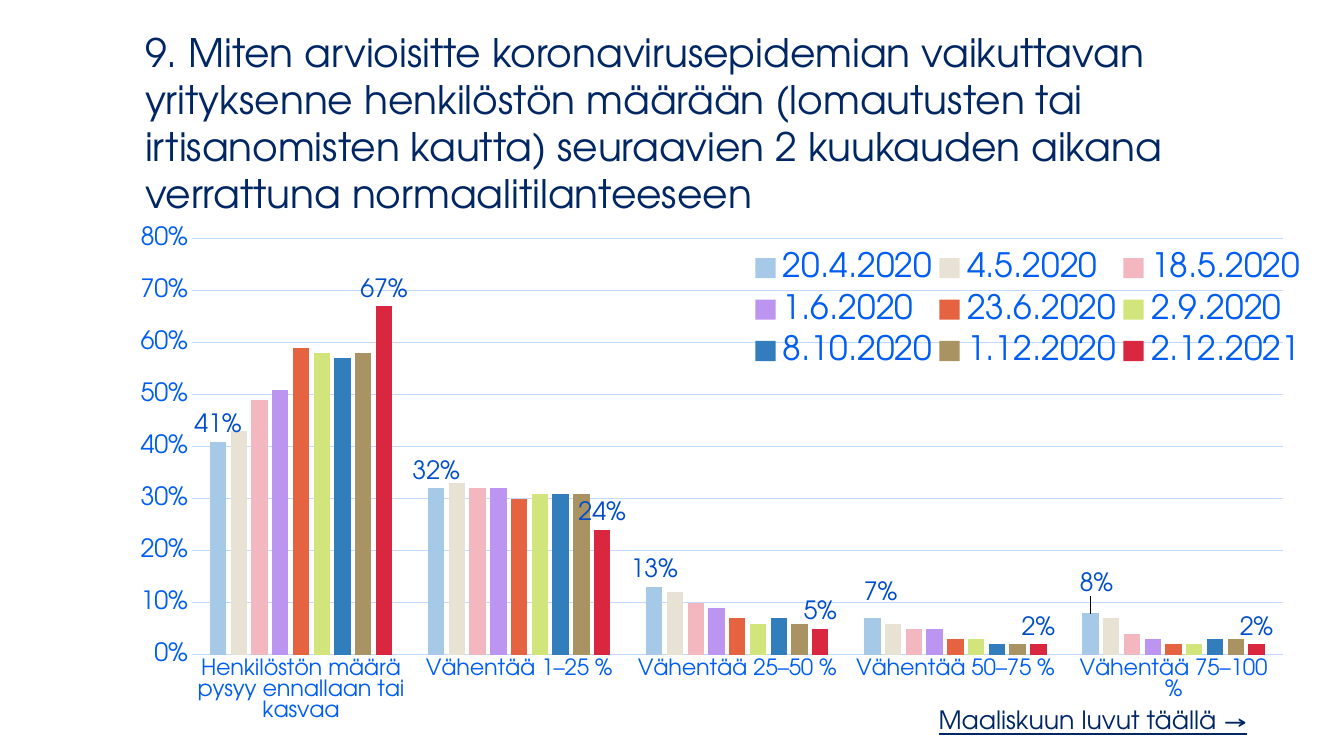
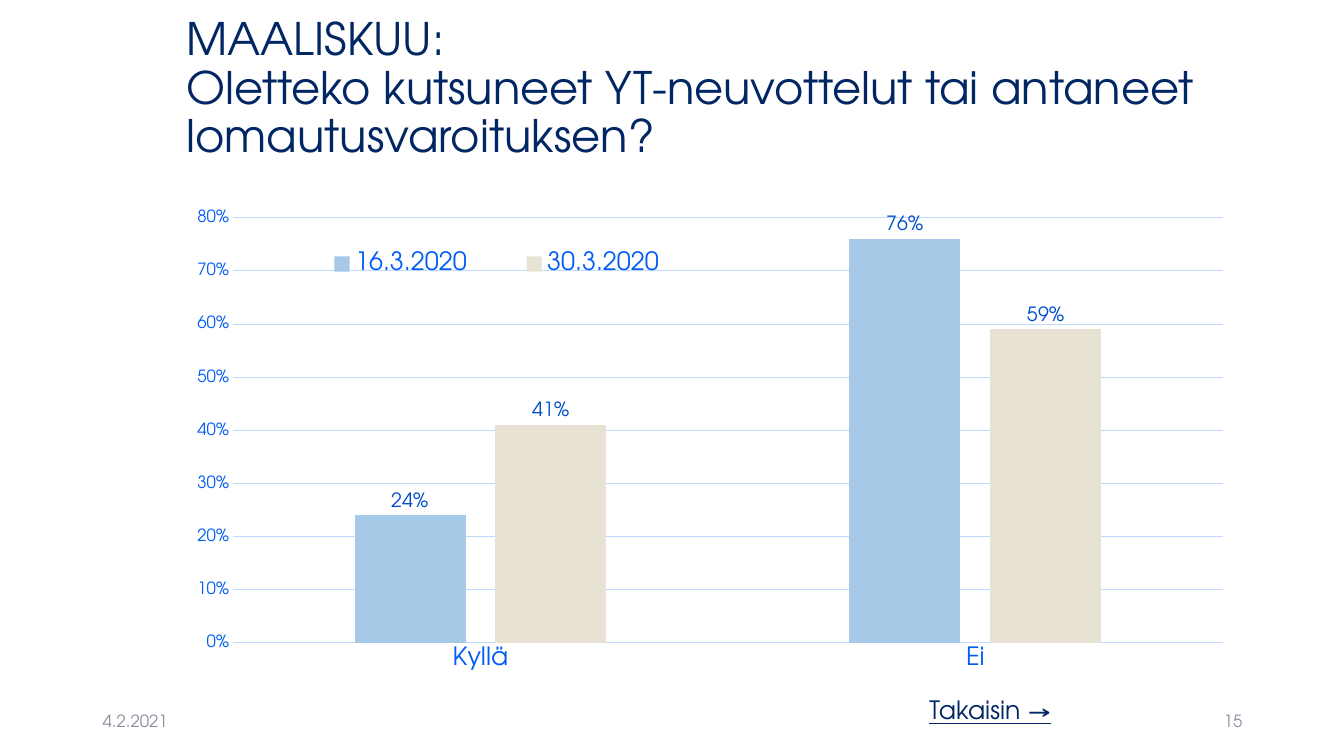
"""Builds two survey result slides with clustered column charts."""
from lxml import etree
from pptx import Presentation
from pptx.chart.data import CategoryChartData
from pptx.dml.color import RGBColor
from pptx.enum.chart import XL_CHART_TYPE, XL_LABEL_POSITION, XL_LEGEND_POSITION, XL_TICK_MARK
from pptx.enum.text import MSO_ANCHOR, PP_ALIGN
from pptx.oxml.ns import qn
from pptx.util import Inches, Pt

COLUMNS = XL_CHART_TYPE.COLUMN_CLUSTERED
ABOVE = XL_LABEL_POSITION.OUTSIDE_END
BOTTOM = XL_LEGEND_POSITION.BOTTOM
NO_TICK = XL_TICK_MARK.NONE
TOP, MIDDLE = MSO_ANCHOR.TOP, MSO_ANCHOR.MIDDLE
LEFT, RIGHT = PP_ALIGN.LEFT, PP_ALIGN.RIGHT

FONT = "TeX Gyre Adventor"
PERCENT = "0%"
COLORS = {"title": "002663", "axis": "005DF3", "label": "004DCA",
          "grid": "C1D9FF", "footer": "8C8E9F"}
SERIES_COLORS = ["A5C9E7", "E8E2D5", "F2B7BF", "BB95EF", "E66342",
                 "D1E57C", "327DBC", "A99362", "D8273F"]

STAFF_CATEGORIES = ["Henkilöstön määrä pysyy ennallaan tai kasvaa", "Vähentää 1–25 %",
                    "Vähentää 25–50 %", "Vähentää 50–75 %", "Vähentää 75–100 %"]
STAFF_SERIES = {
    "20.4.2020": [0.41, 0.32, 0.13, 0.07, 0.08],
    "4.5.2020": [0.43, 0.33, 0.12, 0.06, 0.07],
    "18.5.2020": [0.49, 0.32, 0.1, 0.05, 0.04],
    "1.6.2020": [0.51, 0.32, 0.09, 0.05, 0.03],
    "23.6.2020": [0.59, 0.3, 0.07, 0.03, 0.02],
    "2.9.2020": [0.58, 0.31, 0.06, 0.03, 0.02],
    "8.10.2020": [0.57, 0.31, 0.07, 0.02, 0.03],
    "1.12.2020": [0.58, 0.31, 0.06, 0.02, 0.03],
    "2.12.2021": [0.67, 0.24, 0.05, 0.02, 0.02],
}
NOTICE_SERIES = {"16.3.2020": [0.24, 0.76], "30.3.2020": [0.41, 0.59]}


def style_font(font, size, color, **extra):
    """Apply the shared typeface with a size, a colour and extra attributes."""
    values = {"name": FONT, "size": Pt(size), **extra}
    for name, value in values.items():
        setattr(font, name, value)
    font.color.rgb = RGBColor.from_string(COLORS[color])


def style_line(line, color):
    """Give a chart line its colour and the shared thin width."""
    line.color.rgb = RGBColor.from_string(COLORS[color])
    line.width = Pt(0.75)


def add_text(page, place, lines, size, color="title", anchor=TOP, align=LEFT,
             spacing=None, **extra):
    """Add a wrapped text box whose lines share one paragraph."""
    box = page.shapes.add_textbox(*map(Inches, place))
    box.text_frame.word_wrap = True
    box.text_frame.vertical_anchor = anchor
    para = box.text_frame.paragraphs[0]
    para.alignment = align
    para.line_spacing = spacing
    for index, line in enumerate(lines):
        if index:
            para.add_line_break()
        span = para.add_run()
        span.text = line
        style_font(span.font, size, color, **extra)


def make_layout(**values):
    """Return a manual chart layout element."""
    layout = etree.Element(qn("c:layout"))
    manual = etree.SubElement(layout, qn("c:manualLayout"))
    for name, value in values.items():
        etree.SubElement(manual, qn(f"c:{name}")).set("val", str(value))
    return layout


def place_part(part, before, place, **target):
    """Fix a chart part at fractions of the chart area."""
    for old in part.findall(qn("c:layout")):
        part.remove(old)
    layout = make_layout(**target, xMode="edge", yMode="edge",
                         **dict(zip("xywh", place)))
    if before is None:
        part.insert(0, layout)
    else:
        part.find(qn(before)).addnext(layout)


def add_labels(series, size):
    """Show percentages above the columns of a series."""
    labels = series.data_labels
    values = {"show_value": True, "number_format": PERCENT,
              "number_format_is_linked": False, "position": ABOVE}
    for name, value in values.items():
        setattr(labels, name, value)
    style_font(labels.font, size, "label")


def move_label(chart, series, point, size, shift):
    """Shift one data label from its usual place."""
    label = series.points[point].data_label
    label.position = ABOVE
    style_font(label.font, size, "label")
    for index in chart.element.xpath(f".//c:dLbl/c:idx[@val='{point}']"):
        index.addnext(make_layout(**dict(zip("xy", shift))))


def style_axes(chart, category_size, value_size):
    """Format both axes and the gridlines."""
    for axis, size in ((chart.category_axis, category_size), (chart.value_axis, value_size)):
        axis.major_tick_mark = axis.minor_tick_mark = NO_TICK
        style_font(axis.tick_labels.font, size, "axis")
    style_line(chart.category_axis.format.line, "grid")
    scale = chart.value_axis
    scale.minimum_scale, scale.maximum_scale, scale.major_unit = 0, 0.8, 0.1
    scale.format.line.fill.background()
    style_line(scale.major_gridlines.format.line, "grid")
    scale.tick_labels.number_format = PERCENT
    scale.tick_labels.number_format_is_linked = False


def add_columns(page, place, categories, values, labelled, sizes, plot_place,
                legend_place, shifts):
    """Add a clustered column chart with a legend over the plot."""
    data = CategoryChartData(number_format=PERCENT)
    data.categories = categories
    for name, numbers in values.items():
        data.add_series(name, numbers)
    chart = page.shapes.add_chart(COLUMNS, *map(Inches, place), data).chart
    style_font(chart.font, 10, "title")
    chart.has_title = False
    style_axes(chart, sizes["category"], sizes["value"])
    plot = chart.plots[0]
    plot.gap_width, plot.overlap, plot.vary_by_categories = 219, -27, False
    for series, color in zip(plot.series, SERIES_COLORS):
        series.format.fill.solid()
        series.format.fill.fore_color.rgb = RGBColor.from_string(color)
        if series.name in labelled:
            add_labels(series, sizes["label"])
    for point, shift in shifts.items():
        move_label(chart, plot.series[0], point, sizes["label"], shift)
    chart.has_legend = True
    chart.legend.position = BOTTOM
    chart.legend.include_in_layout = True
    style_font(chart.legend.font, sizes["legend"], "axis")
    place_part(chart.element.xpath(".//c:plotArea")[0], None, plot_place, layoutTarget="inner")
    place_part(chart.element.xpath(".//c:legend")[0], "c:legendPos", legend_place)


def build_staff_page(page):
    """Build the slide on expected staff numbers."""
    add_columns(page, (1.16, 2.15, 11.81, 5.12), STAFF_CATEGORIES, STAFF_SERIES,
                ("20.4.2020", "2.12.2021"),
                {"category": 16, "value": 18, "label": 18, "legend": 24},
                (0.063, 0.043, 0.916, 0.806), (0.53, 0.05, 0.47, 0.26),
                {3: (0.007, -0.016), 4: (0.005, -0.025)})
    add_text(page, (1.34, 0.23, 11.44, 1.99),
             ["9. Miten arvioisitte koronavirusepidemian vaikuttavan yrityksenne henkilöstön "
              "määrään (lomautusten tai irtisanomisten kautta) seuraavien 2 kuukauden aikana "
              "verrattuna normaalitilanteeseen"], 28)
    add_text(page, (9.21, 6.94, 3.59, 0.41), ["Maaliskuun luvut täällä →"], 18, underline=True)


def build_notice_page(page):
    """Build the slide on layoff notices in March."""
    add_text(page, (1.75, 0.12, 10.59, 1.55),
             ["MAALISKUU:", "Oletteko kutsuneet YT-neuvottelut tai antaneet lomautusvaroituksen?"],
             32, spacing=0.9)
    for left, text, align in ((0.92, "4.2.2021", LEFT), (9.42, "15", RIGHT)):
        add_text(page, (left, 6.95, 3, 0.4), [text], 12, "footer", MIDDLE, align)
    add_columns(page, (1.75, 2, 10.59, 4.76), ["Kyllä", "Ei"], NOTICE_SERIES, NOTICE_SERIES,
                {"category": 18, "value": 12, "label": 14, "legend": 18},
                (0.053, 0.034, 0.927, 0.886), (0.1, 0.09, 0.4, 0.08), {})
    add_text(page, (9.12, 6.84, 2.72, 0.4), ["Takaisin →"], 18, underline=True)


def main():
    """Build and save the deck."""
    deck = Presentation()
    deck.slide_width, deck.slide_height = Inches(13.33), Inches(7.5)
    for build in (build_staff_page, build_notice_page):
        build(deck.slides.add_slide(deck.slide_layouts[6]))
    deck.save("out.pptx")


if __name__ == "__main__":
    main()
